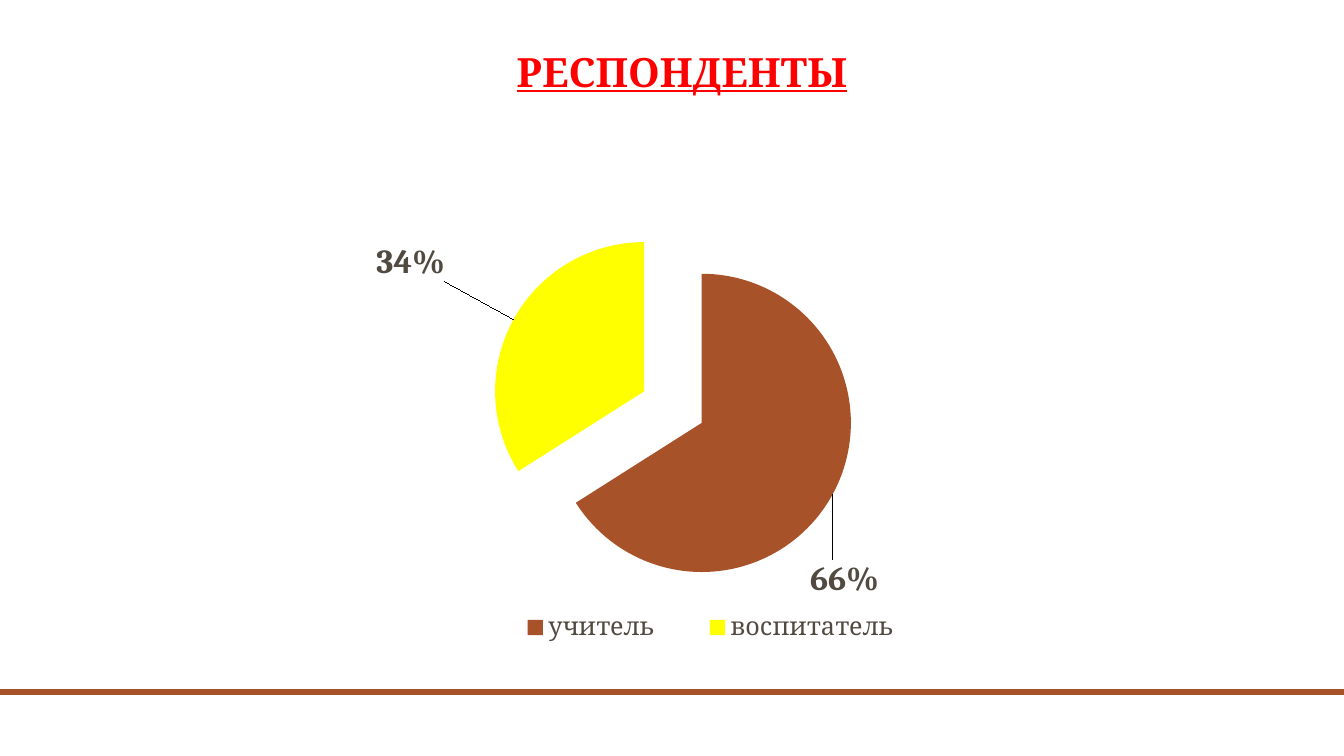
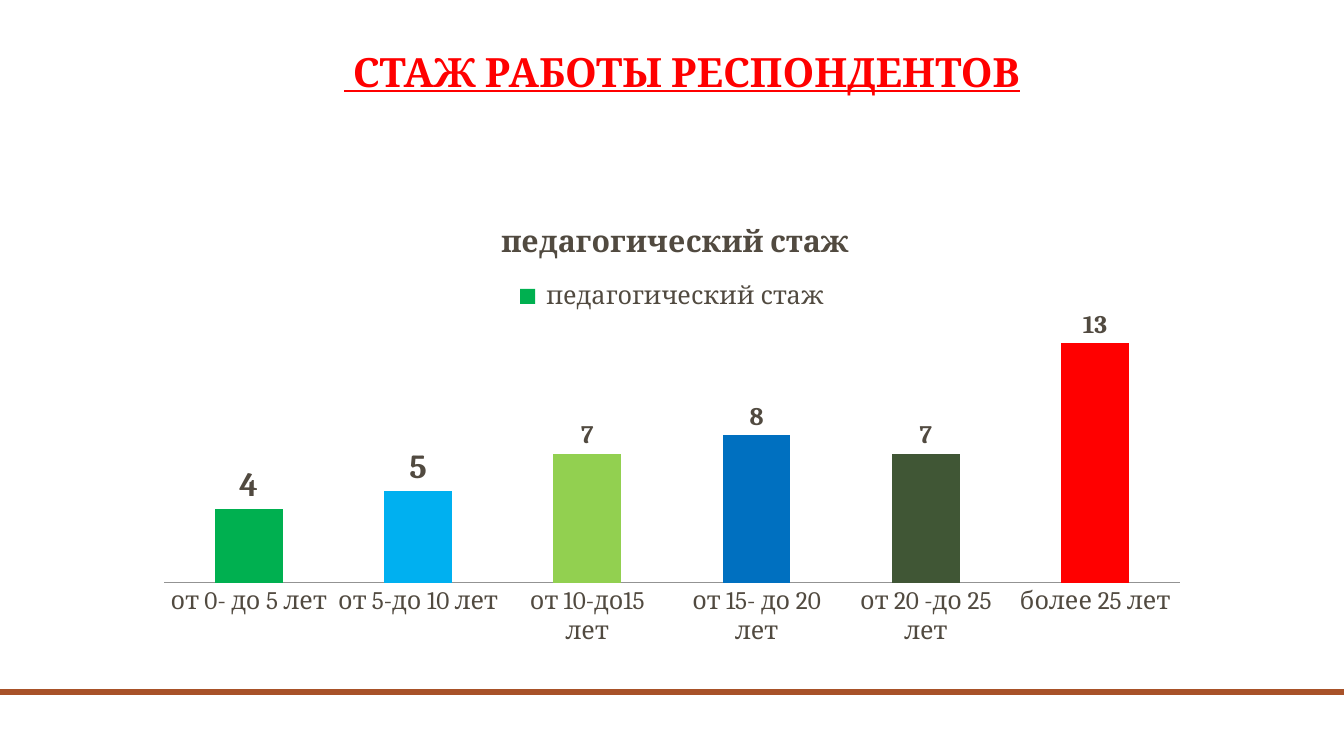
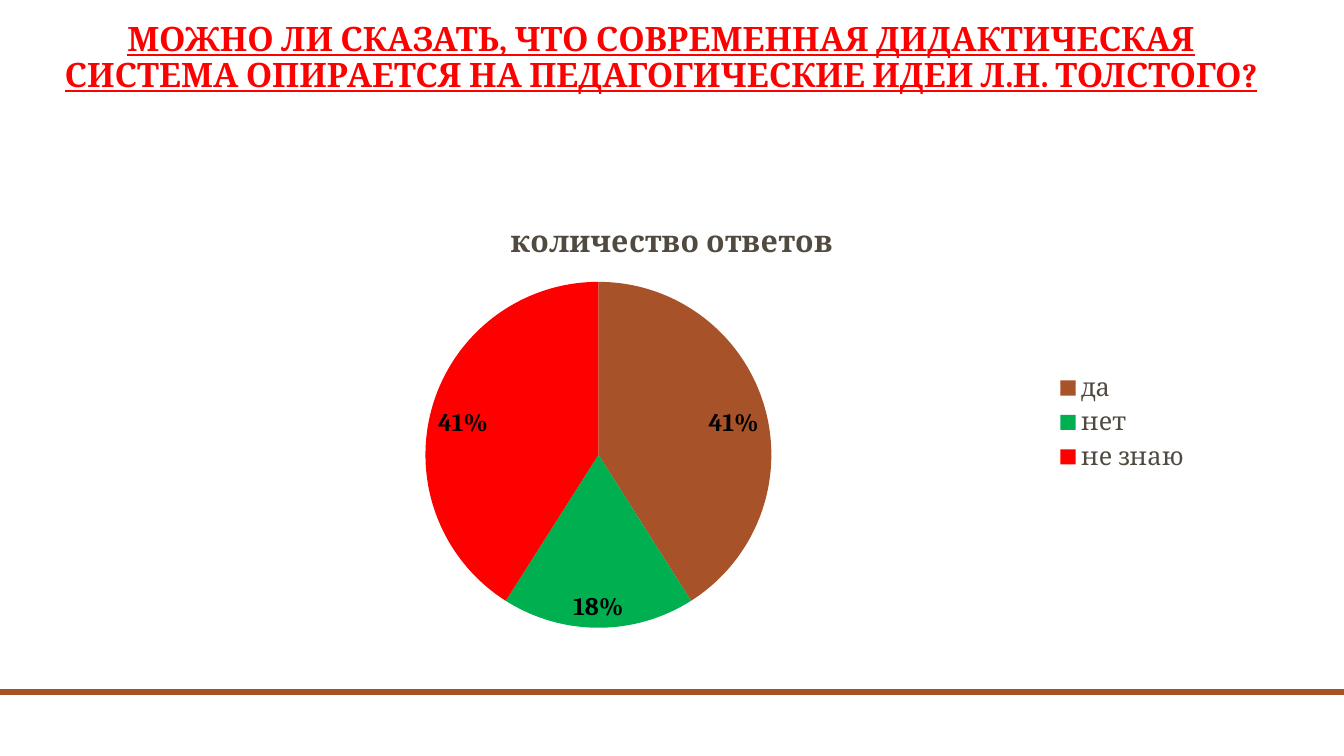
"""Build three survey slides, each with an underlined title and a chart."""
from lxml.etree import SubElement
from pptx import Presentation
from pptx.chart.data import CategoryChartData
from pptx.dml.color import RGBColor
from pptx.enum.chart import XL_CHART_TYPE, XL_LABEL_POSITION, XL_LEGEND_POSITION, XL_TICK_MARK
from pptx.enum.shapes import MSO_SHAPE
from pptx.enum.text import MSO_ANCHOR, MSO_AUTO_SIZE, PP_ALIGN
from pptx.oxml.ns import qn
from pptx.util import Emu, Pt

PX = 914400 / 100.8
FONT = "Cambria"
COLORS = {
    "brown": "A85229", "text": "514A40", "red": "FF0000", "yellow": "FFFF00",
    "green": "00B050", "sky": "00B0F0", "lime": "92D050", "blue": "0070C0",
    "olive": "405635", "black": "000000", "axis": "939393",
}
RGB = {name: RGBColor.from_string(value) for name, value in COLORS.items()}
TITLE_BOX = (331, 39, 702, 62)
CHART_BOX = (143, 202, 1058, 454)

SLIDES = [
    {
        "title": "РЕСПОНДЕНТЫ", "title_box": TITLE_BOX, "title_size": 28.8,
        "type": XL_CHART_TYPE.PIE, "box": CHART_BOX, "plot": (491, 225, 364, 364),
        "name": "Series 1", "format": "0%", "explosion": 22,
        "points": [("учитель", 0.66, "brown"), ("воспитатель", 0.34, "yellow")],
        "legend": XL_LEGEND_POSITION.BOTTOM, "legend_box": (480, 605, 460, 45),
        "label_color": "text", "label_position": XL_LABEL_POSITION.OUTSIDE_END,
        "large_labels": [(-27, 62), (-63, -35)],
    },
    {
        "title": " СТАЖ РАБОТЫ РЕСПОНДЕНТОВ", "title_box": TITLE_BOX, "title_size": 28.8,
        "type": XL_CHART_TYPE.COLUMN_CLUSTERED, "box": CHART_BOX, "plot": (164, 325, 1016, 258),
        "name": " педагогический стаж", "format": "General", "chart_title": " педагогический стаж",
        "points": [
            ("от 0- до 5 лет", 4, "green"), ("от 5-до 10 лет", 5, "sky"),
            ("от 10-до15 лет", 7, "lime"), ("от 15- до 20 лет", 8, "blue"),
            ("от 20 -до 25 лет", 7, "olive"), ("более 25 лет", 13, "red"),
        ],
        "legend": XL_LEGEND_POSITION.TOP,
        "label_color": "text", "label_position": XL_LABEL_POSITION.OUTSIDE_END,
        "large_labels": [(0, 0), (0, 0)],
    },
    {
        "title": "МОЖНО ЛИ СКАЗАТЬ, ЧТО СОВРЕМЕННАЯ ДИДАКТИЧЕСКАЯ СИСТЕМА ОПИРАЕТСЯ "
                 "НА ПЕДАГОГИЧЕСКИЕ ИДЕИ Л.Н. ТОЛСТОГО?",
        "title_box": (29, 42, 1264, 58), "title_size": 24,
        "type": XL_CHART_TYPE.PIE, "box": (143, 202, 1058, 441), "plot": (425, 282, 346, 346),
        "name": "количество ответов", "format": "0%", "chart_title": "количество ответов",
        "points": [("да", 0.41, "brown"), ("нет", 0.18, "green"), ("не знаю", 0.41, "red")],
        "legend": XL_LEGEND_POSITION.RIGHT,
        "label_color": "black", "label_position": XL_LABEL_POSITION.INSIDE_END,
        "large_labels": [],
    },
]


def set_font(font, color, **values):
    for key, value in {"name": FONT, **values}.items():
        setattr(font, key, value)
    font.color.rgb = RGB[color]


def set_layout(parent, index, settings):
    for old in parent.findall(qn("c:layout")):
        parent.remove(old)
    layout = SubElement(parent, qn("c:layout"))
    manual = SubElement(layout, qn("c:manualLayout"))
    for key, value in settings.items():
        SubElement(manual, qn(f"c:{key}")).set("val", str(value))
    parent.insert(index, layout)


prs = Presentation()
prs.slide_width, prs.slide_height = Emu(round(1344 * PX)), Emu(round(756 * PX))
title_only = prs.slide_layouts[5]

for number, item in enumerate(SLIDES):
    s = prs.slides.add_slide(title_only)
    if number == 0:
        band = s.shapes.add_shape(MSO_SHAPE.RECTANGLE, *[Emu(round(v * PX)) for v in (0, 689, 1344, 6)])
        band.shadow.inherit = False
        band.fill.solid()
        band.fill.fore_color.rgb = RGB["brown"]
        band.line.fill.background()
        title_only.shapes.element.append(band.element)

    title = s.shapes.title
    for side, value in zip(("left", "top", "width", "height"), item["title_box"]):
        setattr(title, side, Emu(round(value * PX)))
    tf = title.text_frame
    for key, value in {"word_wrap": True, "auto_size": MSO_AUTO_SIZE.NONE,
                       "vertical_anchor": MSO_ANCHOR.BOTTOM}.items():
        setattr(tf, key, value)
    p = tf.paragraphs[0]
    p.alignment, p.line_spacing = PP_ALIGN.CENTER, 0.9
    r = p.add_run()
    r.text = item["title"]
    set_font(r.font, "red", size=Pt(item["title_size"]), bold=True, underline=True)

    left, top, width, height = item["box"]
    categories, values, fills = zip(*item["points"])
    data = CategoryChartData(number_format=item["format"])
    data.categories = categories
    data.add_series(item["name"], values)
    frame = s.shapes.add_chart(item["type"], *[Emu(round(v * PX)) for v in item["box"]], data)
    chart = frame.chart
    set_font(chart.font, "text", size=Pt(18))
    chart.has_title = "chart_title" in item
    if chart.has_title:
        r = chart.chart_title.text_frame.paragraphs[0].add_run()
        r.text = item["chart_title"]
        set_font(r.font, "text", size=Pt(21.6), bold=True)
        chart.chart_title.include_in_layout = False
    chart.has_legend = True
    chart.legend.position = item["legend"]
    chart.legend.include_in_layout = False

    areas = [("c:plotArea", 0, {"layoutTarget": "inner"}, item["plot"])]
    if "legend_box" in item:
        areas.append(("c:legend", 1, {}, item["legend_box"]))
    for tag, index, target, (x, y, w, h) in areas:
        set_layout(chart.element.xpath(f".//{tag}")[0], index, {
            **target, "xMode": "edge", "yMode": "edge",
            "x": round((x - left) / width, 3), "y": round((y - top) / height, 3),
            "w": round(w / width, 3), "h": round(h / height, 3),
        })

    plot = chart.plots[0]
    series = plot.series[0]
    if item["type"] == XL_CHART_TYPE.PIE:
        plot.vary_by_categories = True
    else:
        plot.vary_by_categories = False
        plot.gap_width, plot.overlap = 150, -25
        series.format.fill.solid()
        series.format.fill.fore_color.rgb = RGB[fills[0]]
        axis = chart.value_axis
        for key, value in {"visible": False, "has_major_gridlines": False,
                           "minimum_scale": 0, "maximum_scale": 14}.items():
            setattr(axis, key, value)
        axis = chart.category_axis
        axis.major_tick_mark = axis.minor_tick_mark = XL_TICK_MARK.NONE
        axis.format.line.color.rgb = RGB["axis"]
        axis.format.line.width = Pt(0.75)
    if "explosion" in item:
        ser = chart.element.xpath(".//c:ser")[0]
        explosion = SubElement(ser, qn("c:explosion"))
        explosion.set("val", str(item["explosion"]))
        ser.find(qn("c:cat")).addprevious(explosion)

    for index, fill in enumerate(fills):
        point = series.points[index]
        point.format.fill.solid()
        point.format.fill.fore_color.rgb = RGB[fill]
        point.format.line.fill.background()

    labels = series.data_labels
    for key, value in {"show_value": True, "number_format": item["format"],
                       "number_format_is_linked": False, "position": item["label_position"]}.items():
        setattr(labels, key, value)
    set_font(labels.font, item["label_color"], size=Pt(18), bold=True)
    for index, (dx, dy) in enumerate(item["large_labels"]):
        label = series.points[index].data_label
        set_font(label.font, item["label_color"], size=Pt(24), bold=True)
        label.position = item["label_position"]
        if dx or dy:
            set_layout(chart.element.xpath(".//c:dLbl")[index], 1,
                       {"x": round(dx / width, 3), "y": round(dy / height, 3)})

prs.save("out.pptx")
